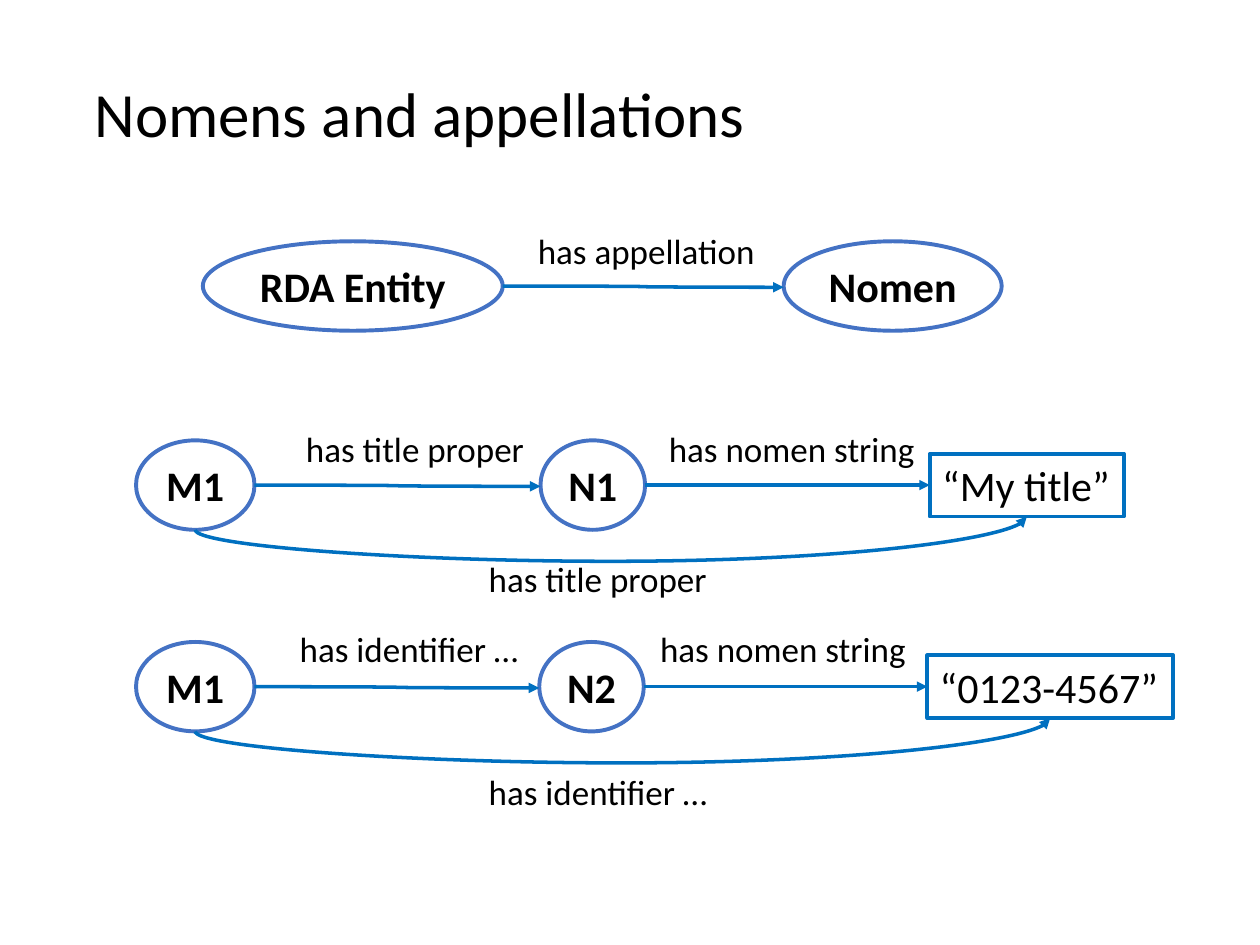
from lxml import etree
from pptx import Presentation
from pptx.dml.color import RGBColor
from pptx.enum.shapes import MSO_CONNECTOR, MSO_SHAPE
from pptx.enum.text import MSO_ANCHOR, MSO_AUTO_SIZE, PP_ALIGN
from pptx.oxml.ns import qn
from pptx.util import Inches, Pt

CURVE = MSO_CONNECTOR.CURVE
OVAL, RECTANGLE = MSO_SHAPE.OVAL, MSO_SHAPE.RECTANGLE
LEFT, CENTER = PP_ALIGN.LEFT, PP_ALIGN.CENTER
MIDDLE = MSO_ANCHOR.MIDDLE
NO_AUTOFIT = MSO_AUTO_SIZE.NONE
RECTANGLE_LEFT_SITE = 1

COLORS = {"text": "000000", "arrow": "0070C0", "entity": "4472C4"}
FONT = "Calibri"
TITLE = "Nomens and appellations"

# Nodes: (text, left, width). Labels: (text, left, top, width).
ROWS = [
    {"middle": 2.27,
     "entities": [("RDA Entity", 1.61, 2.38), ("Nomen", 6.22, 1.73)],
     "labels": [("has appellation", 4.17, 1.77, 1.94)]},
    {"middle": 3.85,
     "entities": [("M1", 1.08, 0.94), ("N1", 4.29, 0.83)],
     "string": ("“My title”", 7.38, 1.54),
     "labels": [("has title proper", 2.33, 3.34, 1.95),
                ("has nomen string", 5.21, 3.34, 2.17),
                ("has title proper", 3.78, 4.37, 1.95)]},
    {"middle": 5.45,
     "entities": [("M1", 1.08, 0.94), ("N2", 4.28, 0.83)],
     "string": ("“0123-4567”", 7.36, 1.95),
     "labels": [("has identifier …", 2.28, 4.93, 1.98),
                ("has nomen string", 5.14, 4.93, 2.17),
                ("has identifier …", 3.78, 6.06, 1.98)]},
]
ENTITY_HEIGHT, STRING_HEIGHT, LABEL_HEIGHT = 0.71, 0.5, 0.44
ARROW_DROP = 0.01
SHORTCUT_DEPTH = 0.25


def write(shape, text, size, alignment=LEFT, bold=False):
    frame = shape.text_frame
    frame.text = text
    frame.word_wrap = False
    frame.auto_size = NO_AUTOFIT
    frame.vertical_anchor = MIDDLE
    paragraph = frame.paragraphs[0]
    paragraph.alignment = alignment
    font = paragraph.runs[0].font
    font.name, font.size, font.bold = FONT, Pt(size), bold
    font.color.rgb = RGBColor.from_string(COLORS["text"])


def add_node(slide, kind, node, middle, height, color, alignment, bold):
    text, left, width = node
    shape = slide.shapes.add_shape(kind, Inches(left), Inches(middle - height / 2),
                                   Inches(width), Inches(height))
    shape.shadow.inherit = False
    shape.fill.background()
    shape.line.color.rgb = RGBColor.from_string(COLORS[color])
    shape.line.width = Pt(2.25)
    write(shape, text, 24, alignment, bold)
    return shape


def add_arrow(slide, start, end):
    connector = slide.shapes.add_connector(CURVE, *map(Inches, start + end))
    connector.line.color.rgb = RGBColor.from_string(COLORS["arrow"])
    connector.line.width = Pt(2)
    etree.SubElement(connector.line._get_or_add_ln(), qn("a:tailEnd"), type="triangle")
    etree.SubElement(connector._element.spPr, qn("a:effectLst"))
    return connector


def add_shortcut(slide, start, end):
    """Add an arrow that dips below both ends: a curve turned by 90 degrees."""
    rise, span = start[1] - end[1], end[0] - start[0]
    center_x, center_y = (start[0] + end[0]) / 2, (start[1] + end[1]) / 2
    connector = add_arrow(slide, (center_x + rise / 2, center_y + span / 2),
                          (center_x - rise / 2, center_y - span / 2))
    properties = connector._element.spPr
    properties.find(qn("a:xfrm")).set("rot", str(90 * 60000))
    geometry = properties.find(qn("a:prstGeom"))
    adjustments = geometry.find(qn("a:avLst"))
    if adjustments is None:
        adjustments = etree.SubElement(geometry, qn("a:avLst"))
    bend = round(-SHORTCUT_DEPTH / rise * 100000)
    etree.SubElement(adjustments, qn("a:gd"), name="adj1", fmla=f"val {bend}")


def add_row(slide, row):
    middle = row["middle"]
    first, second = row["entities"]
    for entity in row["entities"]:
        add_node(slide, OVAL, entity, middle, ENTITY_HEIGHT, "entity", CENTER, True)
    add_arrow(slide, (first[1] + first[2], middle), (second[1], middle + ARROW_DROP))

    if "string" in row:
        string = row["string"]
        box = add_node(slide, RECTANGLE, string, middle, STRING_HEIGHT, "arrow", LEFT, False)
        arrow = add_arrow(slide, (second[1] + second[2], middle), (string[1], middle))
        arrow.end_connect(box, RECTANGLE_LEFT_SITE)
        add_shortcut(slide, (first[1] + first[2] / 2, middle + ENTITY_HEIGHT / 2),
                     (string[1] + string[2] / 2, middle + STRING_HEIGHT / 2))

    for text, left, top, width in row["labels"]:
        label = slide.shapes.add_textbox(Inches(left), Inches(top),
                                         Inches(width), Inches(LABEL_HEIGHT))
        write(label, text, 20)


def main():
    presentation = Presentation()
    presentation.slide_width, presentation.slide_height = Inches(10), Inches(7.5)
    slide = presentation.slides.add_slide(presentation.slide_layouts[5])
    title = slide.shapes.title
    title.left, title.top = Inches(0.65), Inches(0.54)
    title.width, title.height = Inches(5.41), Inches(0.71)
    write(title, TITLE, 36)
    for row in ROWS:
        add_row(slide, row)
    presentation.save("out.pptx")


if __name__ == "__main__":
    main()
